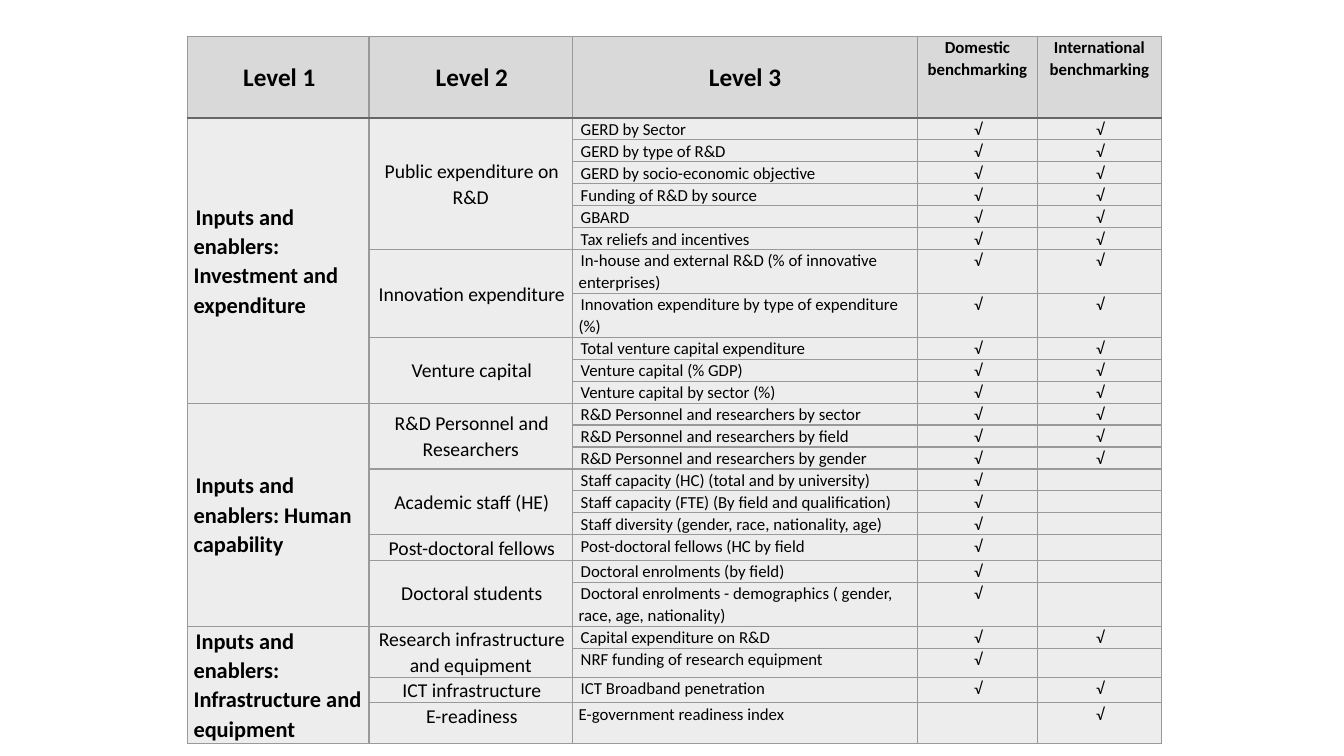
"""Build a slide with the table of benchmarking indicators by level."""
from lxml.etree import SubElement
from pptx import Presentation
from pptx.dml.color import RGBColor
from pptx.enum.text import MSO_ANCHOR, PP_ALIGN
from pptx.oxml.ns import qn
from pptx.util import Inches, Pt

HEADERS = ["Level 1", "Level 2", "Level 3", "Domestic benchmarking", "International benchmarking"]
BOTH, DOMESTIC, INTERNATIONAL = ("√", "√"), ("√", ""), ("", "√")
LEVELS = [
    ("Inputs and enablers: Investment and expenditure", [
        ("Public expenditure on R&D", [
            ("GERD by Sector", BOTH),
            ("GERD by type of R&D", BOTH),
            ("GERD by socio-economic objective", BOTH),
            ("Funding of R&D by source", BOTH),
            ("GBARD", BOTH),
            ("Tax reliefs and incentives", BOTH)]),
        ("Innovation expenditure", [
            ("In-house and external R&D (% of innovative enterprises)", BOTH),
            ("Innovation expenditure by type of expenditure (%)", BOTH)]),
        ("Venture capital", [
            ("Total venture capital expenditure", BOTH),
            ("Venture capital (% GDP)", BOTH),
            ("Venture capital by sector (%)", BOTH)])]),
    ("Inputs and enablers: Human capability", [
        ("R&D Personnel and Researchers", [
            ("R&D Personnel and researchers by sector", BOTH),
            ("R&D Personnel and researchers by field", BOTH),
            ("R&D Personnel and researchers by gender", BOTH)]),
        ("Academic staff (HE)", [
            ("Staff capacity (HC) (total and by university)", DOMESTIC),
            ("Staff capacity (FTE) (By field and qualification)", DOMESTIC),
            ("Staff diversity (gender, race, nationality, age)", DOMESTIC)]),
        ("Post-doctoral fellows", [
            ("Post-doctoral fellows (HC by field", DOMESTIC)]),
        ("Doctoral students", [
            ("Doctoral enrolments (by field)", DOMESTIC),
            ("Doctoral enrolments - demographics ( gender, race, age, nationality)", DOMESTIC)])]),
    ("Inputs and enablers: Infrastructure and equipment", [
        ("Research infrastructure and equipment", [
            ("Capital expenditure on R&D", BOTH),
            ("NRF funding of research equipment", DOMESTIC)]),
        ("ICT infrastructure", [
            ("ICT Broadband penetration", BOTH)]),
        ("E-readiness", [
            ("E-government readiness index", INTERNATIONAL)])]),
]
COLUMN_WIDTHS = [1.8, 2.02, 3.42, 1.19, 1.23]
HEADER_SIZES = [18, 18, 18, 12, 12]
BODY_SIZES = [16, 14, 12, 12, 12]
TOP_ANCHORED = {"Inputs and enablers: Infrastructure and equipment", "ICT infrastructure", "E-readiness"}
NOT_INDENTED = {"E-government readiness index", *HEADERS[2:]}
TWO_LINE_ROWS = {7, 8, 20}


def color(value):
    return RGBColor.from_string(value)


def add_border(cell, side, value, width):
    line = SubElement(cell._tc.get_or_add_tcPr(), qn(f"a:ln{side}"), w=str(Pt(width)))
    fill = SubElement(line, qn("a:solidFill"))
    SubElement(fill, qn("a:srgbClr"), val=value)


rows = [HEADERS]
merges = []
for level_one, groups in LEVELS:
    first_row = len(rows)
    for level_two, indicators in groups:
        group_row = len(rows)
        for indicator, marks in indicators:
            rows.append([level_one, level_two, indicator, *marks])
        merges.append((1, group_row, len(rows) - 1))
    merges.append((0, first_row, len(rows) - 1))
covered = {(row, column) for column, first, last in merges for row in range(first + 1, last + 1)}

deck = Presentation()
deck.slide_width, deck.slide_height = Inches(13.33), Inches(7.5)
page = deck.slides.add_slide(deck.slide_layouts[6])
frame = page.shapes.add_table(len(rows), len(HEADERS), Inches(1.86), Inches(0.36), Inches(9.67), Inches(6.91))
table = frame.table
table.first_row = table.horz_banding = False
for column, width in zip(table.columns, COLUMN_WIDTHS):
    column.width = Inches(width)

for row, texts in enumerate(rows):
    table.rows[row].height = Inches(0.81 if row == 0 else 0.4 if row in TWO_LINE_ROWS else 0.2)
    for column, text in enumerate(texts):
        cell = table.cell(row, column)
        cell.margin_left = cell.margin_right = Inches(0.06)
        cell.margin_top = cell.margin_bottom = 0
        for side in "LRTB":
            heavy = (row, side) in {(0, "B"), (1, "T")}
            add_border(cell, side, "666666" if heavy else "999999", 1.5 if heavy else 1)
        cell.fill.solid()
        cell.fill.fore_color.rgb = color("D9D9D9" if row == 0 else "EDEDED")
        middle = column < (3 if row == 0 else 2) and text not in TOP_ANCHORED
        cell.vertical_anchor = MSO_ANCHOR.MIDDLE if middle else MSO_ANCHOR.TOP

        para = cell.text_frame.paragraphs[0]
        if (row, column) not in covered:
            para.text = text
        centred = row == 0 or column not in (0, 2)
        para.alignment = PP_ALIGN.CENTER if centred else PP_ALIGN.LEFT
        para.line_spacing = 1.07
        if text not in NOT_INDENTED:
            para._p.get_or_add_pPr().set("indent", str(Inches(0.02)))
        para.font.name = "Calibri"
        para.font.size = Pt((HEADER_SIZES if row == 0 else BODY_SIZES)[column])
        para.font.bold = row == 0 or column == 0
        para.font.color.rgb = color("000000")

for column, first, last in merges:
    if last > first:
        table.cell(first, column).merge(table.cell(last, column))
frame.height = Inches(6.91)

deck.save("out.pptx")
